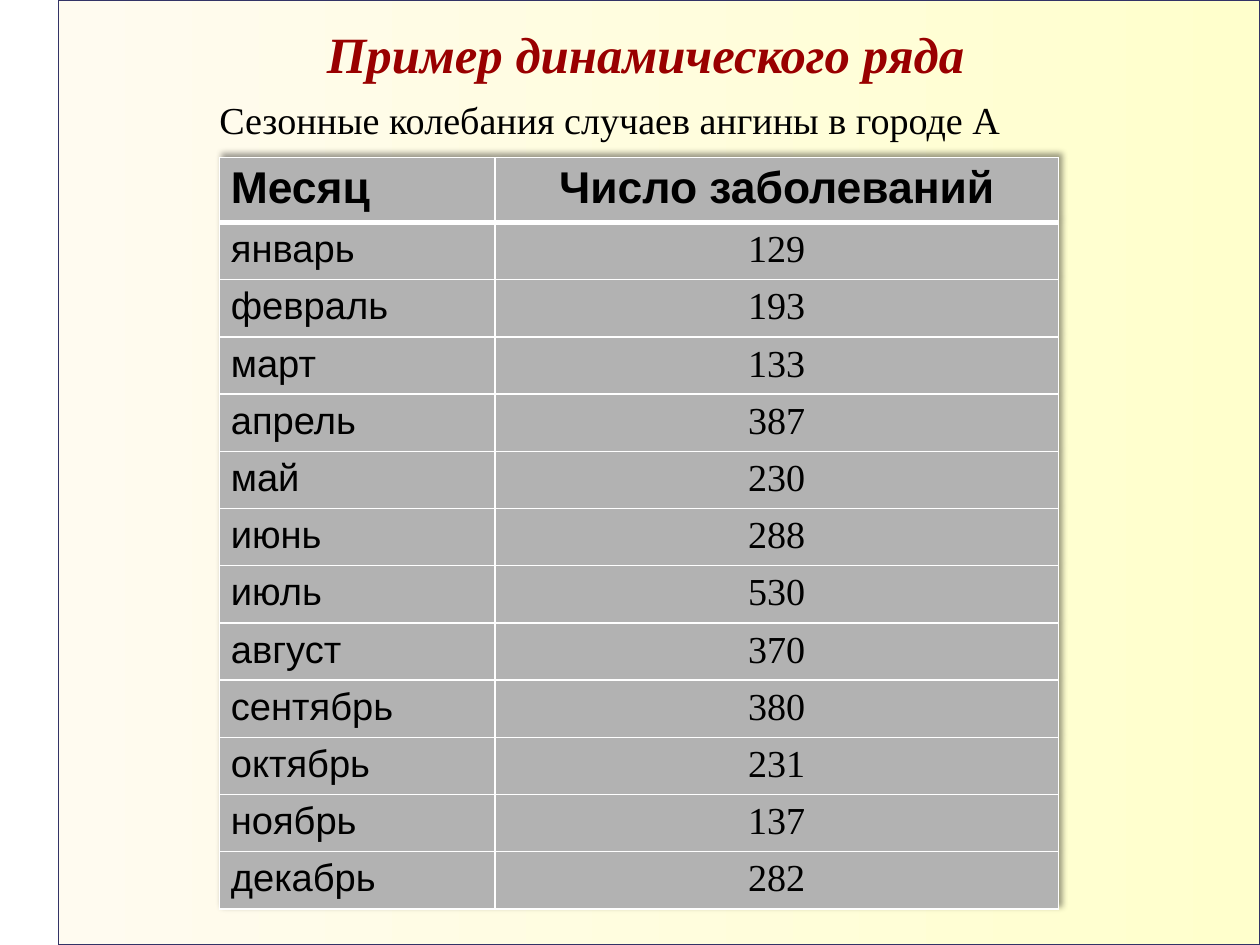
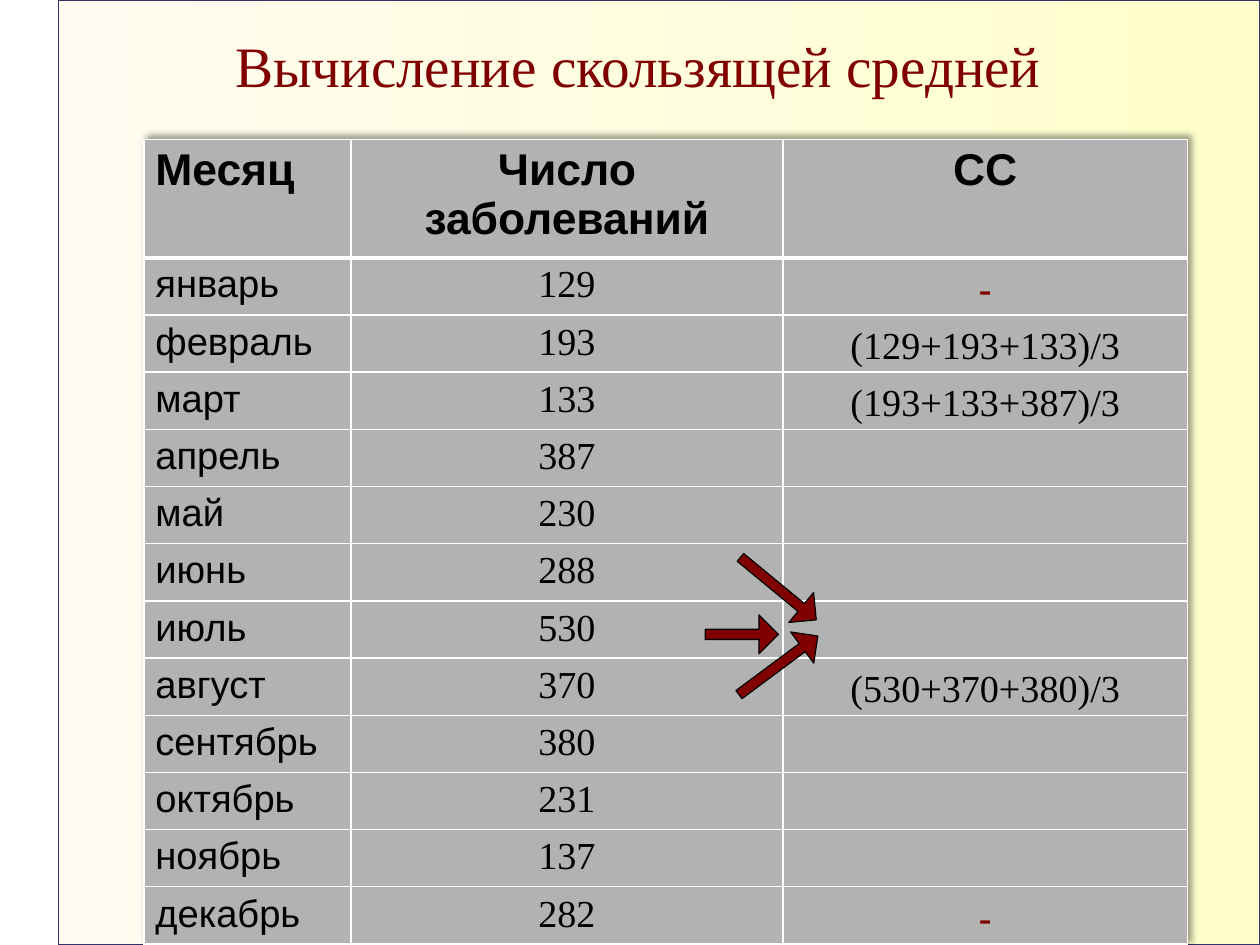
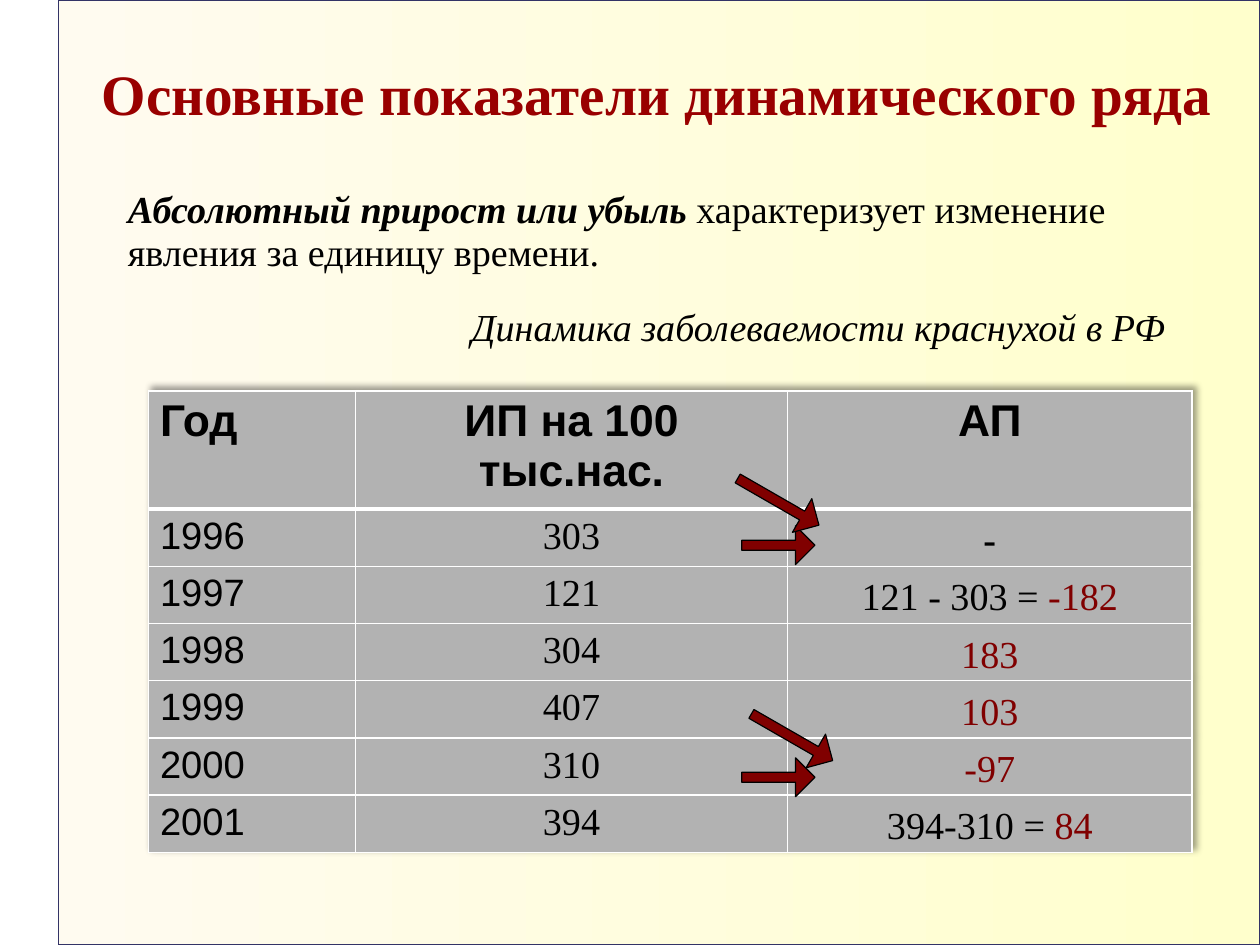
from dataclasses import dataclass

from lxml.etree import SubElement
from pptx import Presentation
from pptx.dml.color import RGBColor
from pptx.enum.shapes import MSO_SHAPE
from pptx.enum.text import MSO_ANCHOR, MSO_AUTO_SIZE, PP_ALIGN
from pptx.oxml import parse_xml
from pptx.oxml.ns import nsdecls, qn
from pptx.util import Inches, Pt


@dataclass(frozen=True)
class Theme:
    serif: str = "Times New Roman"
    sans: str = "Arial"
    ink: str = "000000"
    red: str = "990000"
    maroon: str = "800000"
    cell: str = "B2B2B2"
    grid: str = "FFFFFF"
    frame: str = "333366"
    cream: str = "FFFBF0"
    yellow: str = "FFFFCC"
    title: int = 36
    small_title: int = 32
    header: int = 28
    body: int = 24
    tight: float = 0.93
    single: float = 1.0
    loose: float = 1.15


theme = Theme()
LEFT, CENTER, RIGHT = PP_ALIGN.LEFT, PP_ALIGN.CENTER, PP_ALIGN.RIGHT


def write(frame, runs, size=theme.body, font=theme.serif, align=LEFT, spacing=theme.tight):
    """Fill the first paragraph; each run is (text, colour, bold, italic)."""
    paragraph = frame.paragraphs[0]
    paragraph.alignment = align
    paragraph.line_spacing = spacing
    for text, colour, bold, italic in runs:
        run = paragraph.add_run()
        run.text = text
        run.font.name, run.font.size = font, Pt(size)
        run.font.bold, run.font.italic = bold, italic
        run.font.color.rgb = RGBColor.from_string(colour)
    return paragraph


def add_data_table(slide, left, top, widths, header_height, headers, rows):
    """Grey table with white grid: labels, numbers and an optional list of runs."""
    row_height = 0.5
    height = header_height + row_height * len(rows)
    table = slide.shapes.add_table(
        len(rows) + 1, len(widths), Inches(left), Inches(top),
        Inches(sum(widths)), Inches(height)).table
    table._tbl.tblPr.insert(0, parse_xml(
        f'<a:effectLst {nsdecls("a")}><a:outerShdw blurRad="50800" dist="38100" '
        'dir="18900000" algn="bl" rotWithShape="0"><a:srgbClr val="000000">'
        '<a:alpha val="40000"/></a:srgbClr></a:outerShdw></a:effectLst>'))
    for column, width in zip(table.columns, widths):
        column.width = Inches(width)
    for r, values in enumerate([headers] + rows):
        table.rows[r].height = Inches(row_height if r else header_height)
        for c, value in enumerate(values):
            cell = table.cell(r, c)
            # Borders, with a thick rule under the header
            properties = cell._tc.get_or_add_tcPr()
            for side in "LRTB":
                thick = (r, side) in ((0, "B"), (1, "T"))
                line = SubElement(properties, qn(f"a:ln{side}"), w=str(Pt(3 if thick else 1)))
                SubElement(SubElement(line, qn("a:solidFill")), qn("a:srgbClr"), val=theme.grid)
            cell.fill.solid()
            cell.fill.fore_color.rgb = RGBColor.from_string(theme.cell)
            # Text by role: header, row label, value
            if r == 0:
                write(cell.text_frame, [(value, theme.ink, True, False)],
                      theme.header, theme.sans, CENTER if c else LEFT, theme.single)
            elif c == 0:
                write(cell.text_frame, [(value, theme.ink, False, False)],
                      font=theme.sans, spacing=theme.single)
            elif value:
                cell.margin_left = cell.margin_right = Inches(0.07)
                cell.margin_top = cell.margin_bottom = 0
                if c == 2:
                    cell.vertical_anchor = MSO_ANCHOR.MIDDLE
                runs = value if c == 2 else [(value, theme.ink, False, False)]
                write(cell.text_frame, runs, align=CENTER,
                      spacing=theme.loose).space_after = Pt(10)


# Slide of 28 by 21 centimetres
prs = Presentation()
prs.slide_width, prs.slide_height = Inches(28 / 2.54), Inches(21 / 2.54)

# Titles: text, box, size, colour, bold, italic, alignment, wrap
titles = [
    ("Пример динамического ряда", (2.76, 0.2, 5.83, 0.6),
     theme.small_title, theme.red, True, True, LEFT, False),
    ("Вычисление скользящей средней", (1.65, 0.27, 7.87, 0.66),
     theme.title, theme.maroon, False, False, CENTER, True),
    ("Основные показатели динамического ряда", (0.79, 0.51, 10.01, 0.66),
     theme.title, theme.red, True, False, LEFT, False),
]
for text, box, size, colour, bold, italic, align, wrap in titles:
    title = prs.slides.add_slide(prs.slide_layouts[5]).shapes.title
    title.left, title.top, title.width, title.height = map(Inches, box)
    title.text_frame.auto_size = MSO_AUTO_SIZE.SHAPE_TO_FIT_TEXT
    title.text_frame.word_wrap = wrap
    title.text_frame.vertical_anchor = MSO_ANCHOR.TOP
    write(title.text_frame, [(text, colour, bold, italic)], size, align=align)
example, moving_average, indicators = prs.slides

# Gradient panel, shared through the slide master
panel_left = Inches(0.51)
panel = example.shapes.add_shape(
    MSO_SHAPE.ROUNDED_RECTANGLE, panel_left, 0, prs.slide_width - panel_left, prs.slide_height)
panel.adjustments[0] = 0
panel.shadow.inherit = False
panel.fill.gradient()
panel.fill.gradient_angle = 0
for stop, colour in zip(panel.fill.gradient_stops, (theme.cream, theme.yellow)):
    stop.color.rgb = RGBColor.from_string(colour)
panel.line.color.rgb = RGBColor.from_string(theme.frame)
panel.line.width = Pt(0.75)
prs.slide_master.element.cSld.spTree.insert(2, panel.element)

# Captions and definition
captions = [
    (example, (1.82, 0.79, 7.95, 0.48), LEFT, theme.single,
     [("Сезонные колебания случаев ангины в городе А", theme.ink, False, False)]),
    (indicators, (1.02, 1.61, 9.45, 0.85), LEFT, theme.tight,
     [("Абсолютный прирост или убыль", theme.ink, True, True),
      (" характеризует изменение явления за единицу времени.", theme.ink, False, False)]),
    (indicators, (1.31, 2.64, 8.98, 0.48), RIGHT, theme.tight,
     [("Динамика заболеваемости краснухой в РФ", theme.ink, False, True)]),
]
for slide, box, align, spacing, runs in captions:
    caption = slide.shapes.add_textbox(*map(Inches, box)).text_frame
    caption.word_wrap = True
    write(caption, runs, align=align, spacing=spacing)

# Monthly cases, alone and with the moving average
cases = {"январь": 129, "февраль": 193, "март": 133, "апрель": 387,
         "май": 230, "июнь": 288, "июль": 530, "август": 370,
         "сентябрь": 380, "октябрь": 231, "ноябрь": 137, "декабрь": 282}
add_data_table(example, 1.92, 1.38, (2.41, 4.93), 0.56, ("Месяц", "Число заболеваний"),
               [(month, str(count)) for month, count in cases.items()])

no_average = [("-", theme.maroon, True, False)]
averages = {"январь": no_average, "декабрь": no_average}
months, counts = list(cases), list(cases.values())
for month in ("февраль", "март", "август"):
    i = months.index(month)
    total = "+".join(map(str, counts[i - 1:i + 2]))
    averages[month] = [(f"({total})/3", theme.ink, False, False)]
wide_columns = (1.81, 3.78, 3.54)
add_data_table(moving_average, 1.26, 1.22, wide_columns, 1.03,
               ("Месяц", "Число заболеваний", "СС"),
               [(month, str(count), averages.get(month)) for month, count in cases.items()])

# Absolute growth by year: year, rate, working, result
growth = [("1996", "303", "-", ""), ("1997", "121", "121 - 303 = ", "-182"),
          ("1998", "304", "", "183"), ("1999", "407", "", "103"),
          ("2000", "310", "", "-97"), ("2001", "394", "394-310 = ", "84")]
growth_rows = []
for year, rate, working, result in growth:
    runs = [(working, theme.ink, not result, False), (result, theme.maroon, False, False)]
    growth_rows.append((year, rate, [run for run in runs if run[0]]))
add_data_table(indicators, 1.3, 3.42, wide_columns, 1.03,
               ("Год", "ИП на 100 тыс.нас.", "АП"), growth_rows)

# Arrows: slide, left, top, length, rotation
arrows = [
    (moving_average, 6.64, 4.72, 0.86, 309.5),
    (moving_average, 6.64, 5.39, 0.86, 233.4),
    (moving_average, 6.32, 5.23, 0.64, 270),
    (indicators, 6.64, 4.45, 0.64, 270),
    (indicators, 6.64, 3.98, 0.82, 299.9),
    (indicators, 6.76, 6.04, 0.82, 299.9),
    (indicators, 6.64, 6.48, 0.64, 270),
]
for slide, left, top, length, rotation in arrows:
    arrow = slide.shapes.add_shape(
        MSO_SHAPE.DOWN_ARROW, Inches(left), Inches(top), Inches(0.34), Inches(length))
    arrow.rotation = rotation
    arrow.adjustments[0], arrow.adjustments[1] = 0.26, 0.5
    arrow.shadow.inherit = False
    arrow.fill.solid()
    arrow.fill.fore_color.rgb = RGBColor.from_string(theme.maroon)
    arrow.line.color.rgb = RGBColor.from_string(theme.ink)
    arrow.line.width = Pt(0.75)

prs.save("out.pptx")
